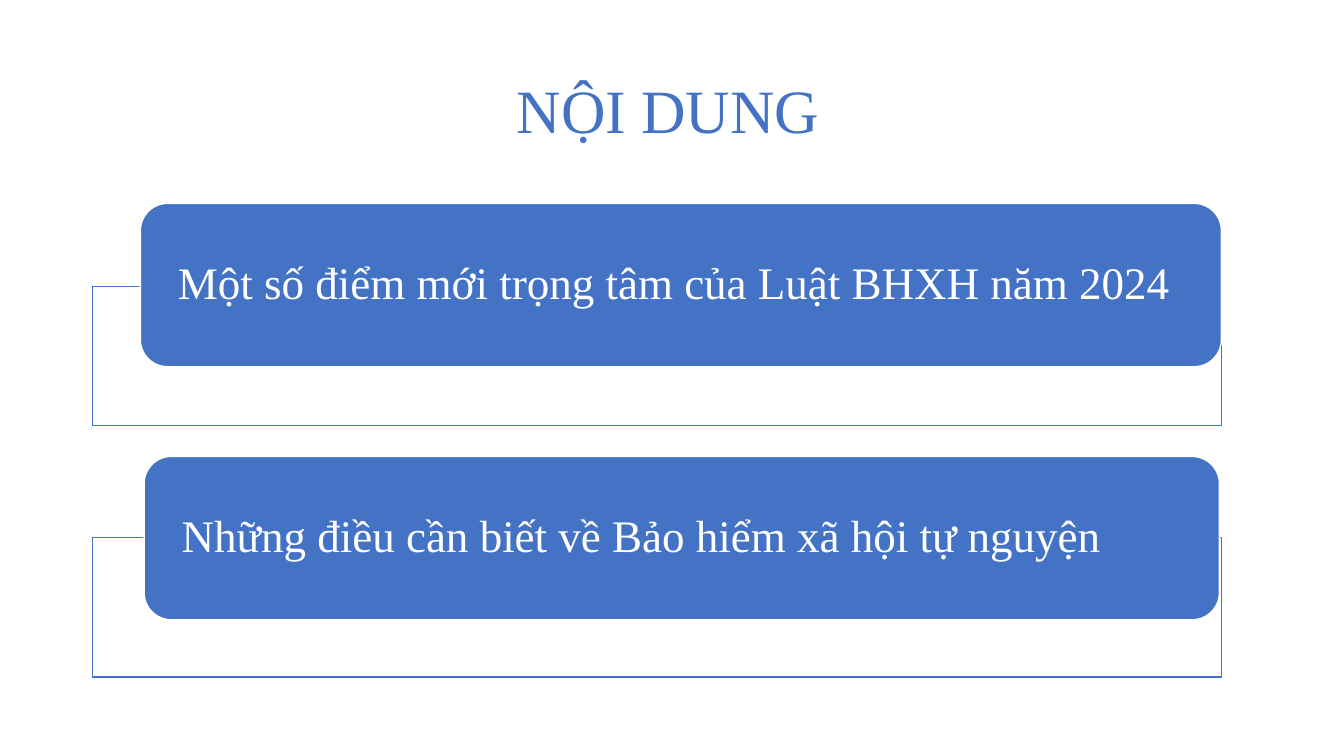
import pptx
import pptx.util
import pptx.dml.color
import pptx.enum.shapes
import pptx.enum.text

Inches = pptx.util.Inches
SHAPES = pptx.enum.shapes.MSO_SHAPE
ALIGN = pptx.enum.text.PP_ALIGN

TITLE = "NỘI DUNG"
# text, frame top, label left, label top, label width
TOPICS = [
    ("Một số điểm mới trọng tâm của Luật BHXH năm 2024", 3.0, 1.47, 2.13, 11.32),
    ("Những điều cần biết về Bảo hiểm xã hội tự nguyện", 5.63, 1.51, 4.78, 11.26),
]
COLORS = {"blue": "4472C4", "white": "FFFFFF"}
FONT = "Times New Roman"
SLIDE_HEIGHT = 95 / 12
SLIDE_WIDTH = SLIDE_HEIGHT * 16 / 9
FRAME_LEFT, FRAME_WIDTH, FRAME_HEIGHT = 0.97, 11.82, 1.46
LABEL_HEIGHT = 1.71
LABEL_INSET = 0.31


def color(name):
    return pptx.dml.color.RGBColor.from_string(COLORS[name])


def write_text(shape, text, *, size, font_color, align, inset_x, inset_y):
    frame = shape.text_frame
    frame.word_wrap = True
    frame.vertical_anchor = pptx.enum.text.MSO_ANCHOR.MIDDLE
    frame.margin_left = frame.margin_right = Inches(inset_x)
    frame.margin_top = frame.margin_bottom = Inches(inset_y)
    paragraph = frame.paragraphs[0]
    paragraph.alignment = align
    paragraph.line_spacing = 0.9
    run = paragraph.add_run()
    run.text = text
    run.font.name = FONT
    run.font.size = pptx.util.Pt(size)
    run.font.color.rgb = color(font_color)


def add_box(slide, kind, left, top, width, height, fill, line):
    shape = slide.shapes.add_shape(
        kind, Inches(left), Inches(top), Inches(width), Inches(height))
    shape.shadow.inherit = False
    shape.fill.solid()
    shape.fill.fore_color.rgb = color(fill)
    shape.line.color.rgb = color(line)
    shape.line.width = pptx.util.Pt(1)
    return shape


def main():
    presentation = pptx.Presentation()
    presentation.slide_width = Inches(SLIDE_WIDTH)
    presentation.slide_height = Inches(SLIDE_HEIGHT)
    slide = presentation.slides.add_slide(presentation.slide_layouts[6])

    title = slide.shapes.add_textbox(
        Inches(0.89), Inches(0.42), Inches(12.21), Inches(1.53))
    write_text(title, TITLE, size=46.4, font_color="blue",
               align=ALIGN.CENTER, inset_x=0.1, inset_y=0.05)

    for text, frame_top, left, top, width in TOPICS:
        add_box(slide, SHAPES.RECTANGLE, FRAME_LEFT, frame_top,
                FRAME_WIDTH, FRAME_HEIGHT, "white", "blue")
        label = add_box(slide, SHAPES.ROUNDED_RECTANGLE, left, top,
                        width, LABEL_HEIGHT, "blue", "white")
        write_text(label, text, size=34, font_color="white",
                   align=ALIGN.LEFT, inset_x=LABEL_INSET, inset_y=0)

    presentation.save("out.pptx")


if __name__ == "__main__":
    main()
